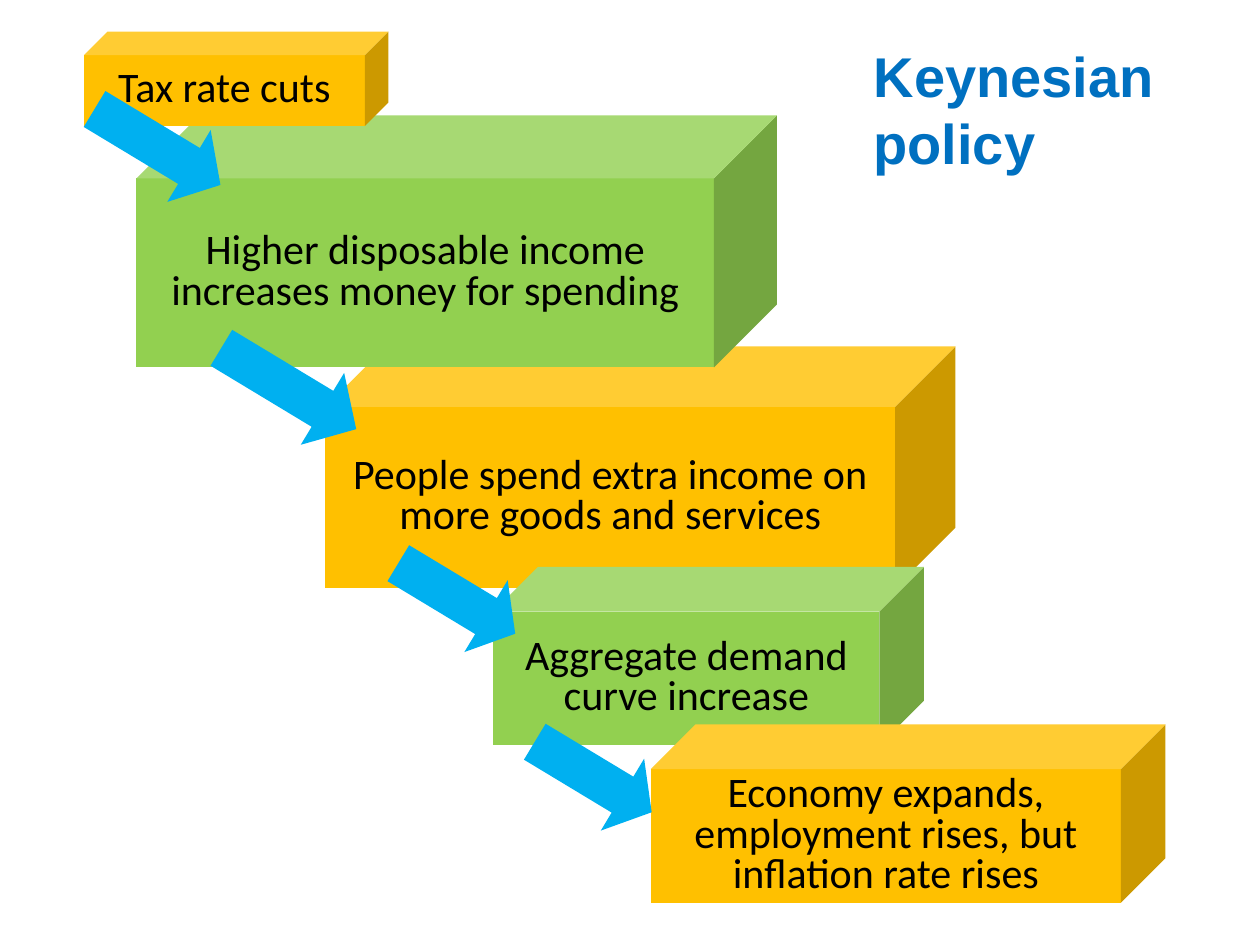
from pptx import Presentation
from pptx.dml.color import RGBColor
from pptx.enum.shapes import MSO_SHAPE
from pptx.enum.text import MSO_ANCHOR, MSO_AUTO_SIZE, PP_ALIGN
from pptx.util import Pt

CUBE, ARROW = MSO_SHAPE.CUBE, MSO_SHAPE.RIGHT_ARROW
TOP, MIDDLE = MSO_ANCHOR.TOP, MSO_ANCHOR.MIDDLE
LEFT, CENTER = PP_ALIGN.LEFT, PP_ALIGN.CENTER
NO_AUTOFIT = MSO_AUTO_SIZE.NONE

GOLD = RGBColor(0xFF, 0xC0, 0x00)
GREEN = RGBColor(0x92, 0xD0, 0x50)
SKY = RGBColor(0x00, 0xB0, 0xF0)
BLUE = RGBColor(0x00, 0x70, 0xC0)
BLACK = RGBColor(0x00, 0x00, 0x00)

TITLE_FONT = {"name": "Arial", "size": Pt(32), "bold": True}
STEP_FONT = {"name": "Calibri", "size": Pt(24), "bold": False}
ARROW_ANGLE = 31.1

STEPS = [
    ("People spend extra income on more goods and services", GOLD, (186, 198, 360, 138)),
    ("Higher disposable income increases money for spending", GREEN, (78, 66, 366, 144)),
    ("Tax rate cuts", GOLD, (48, 18, 174, 54)),
    ("Aggregate demand curve increase", GREEN, (282, 324, 246, 102)),
    ("Economy expands, employment rises, but inflation rate rises", GOLD, (372, 414, 294, 102)),
]
ARROWS = [(48, 60, 84, 48), (120, 198, 90, 48), (222, 318, 78, 48), (300, 420, 78, 48)]


def set_attributes(target, values):
    for name, value in values.items():
        setattr(target, name, value)


def write_text(shape, text, anchor, alignment, spacing, font, color):
    frame = shape.text_frame
    frame.text = text
    set_attributes(frame, {"word_wrap": True, "auto_size": NO_AUTOFIT, "vertical_anchor": anchor})
    para = frame.paragraphs[0]
    set_attributes(para, {"alignment": alignment, "line_spacing": spacing})
    span = para.runs[0]
    set_attributes(span.font, font)
    span.font.color.rgb = color


def add_block(page, kind, box, color):
    shape = page.shapes.add_shape(kind, *map(Pt, box))
    shape.shadow.inherit = False
    shape.fill.solid()
    shape.fill.fore_color.rgb = color
    shape.line.fill.background()
    return shape


def add_title(page, box):
    title = page.shapes.title
    set_attributes(title, dict(zip(("left", "top", "width", "height"), map(Pt, box))))
    write_text(title, "Keynesian policy", TOP, LEFT, 1.0, TITLE_FONT, BLUE)


def add_step(page, box, text, color):
    cube = add_block(page, CUBE, box, color)
    cube.adjustments[0] = 0.25
    write_text(cube, text, MIDDLE, CENTER, 0.8, STEP_FONT, BLACK)


def add_step_arrow(page, box):
    arrow = add_block(page, ARROW, box, SKY)
    width, height = box[2:]
    arrow.adjustments[0] = 0.5
    arrow.adjustments[1] = width / height / 4
    arrow.rotation = ARROW_ANGLE


def main():
    deck = Presentation()
    deck.slide_width, deck.slide_height = Pt(720), Pt(540)
    page = deck.slides.add_slide(deck.slide_layouts[5])
    add_title(page, (492, 20, 180, 82))
    for text, color, box in STEPS:
        add_step(page, box, text, color)
    for box in ARROWS:
        add_step_arrow(page, box)
    deck.save("out.pptx")


if __name__ == "__main__":
    main()
